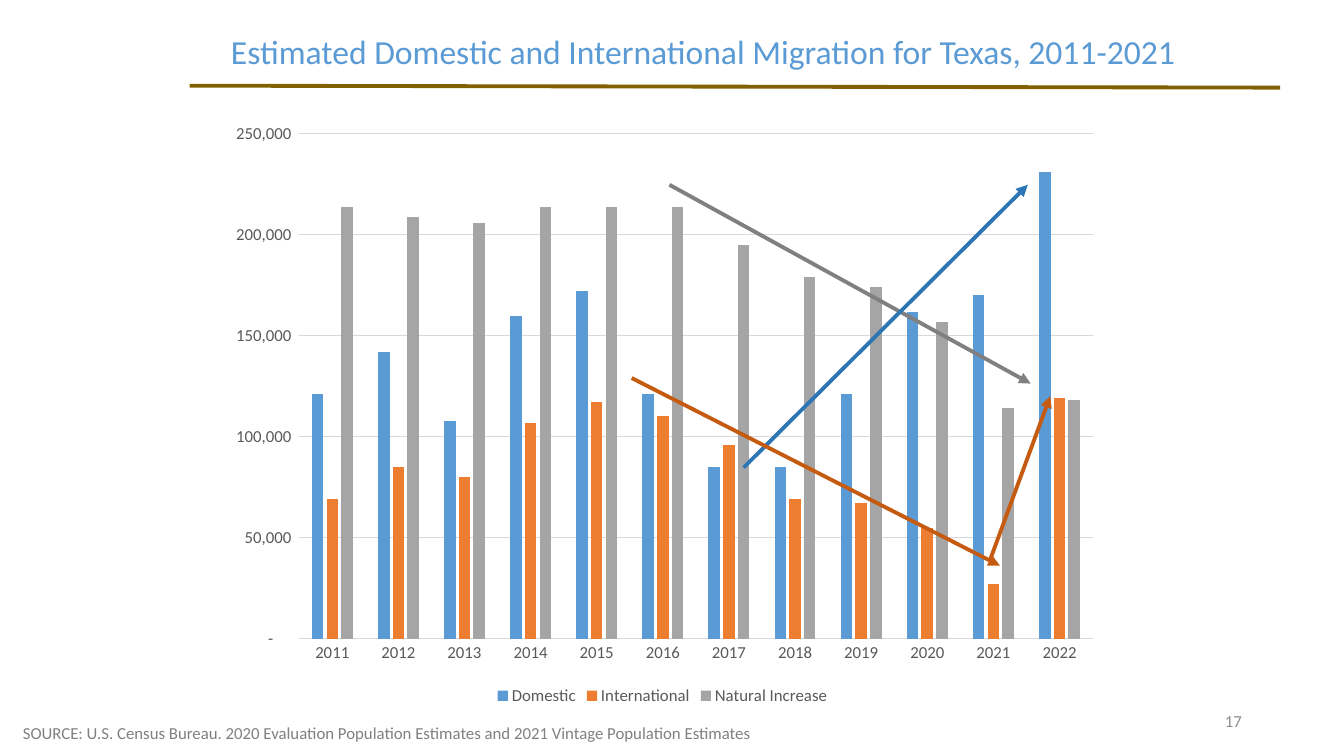
from lxml import etree
from pptx import Presentation
from pptx.chart.data import CategoryChartData
from pptx.dml.color import RGBColor
from pptx.enum.chart import XL_CHART_TYPE, XL_LEGEND_POSITION, XL_TICK_MARK
from pptx.enum.shapes import MSO_CONNECTOR
from pptx.enum.text import MSO_ANCHOR, PP_ALIGN
from pptx.oxml.ns import qn
from pptx.util import Pt

COLUMNS = XL_CHART_TYPE.COLUMN_CLUSTERED
LEGEND_BOTTOM = XL_LEGEND_POSITION.BOTTOM
NO_TICK = XL_TICK_MARK.NONE
STRAIGHT = MSO_CONNECTOR.STRAIGHT
TOP, MIDDLE = MSO_ANCHOR.TOP, MSO_ANCHOR.MIDDLE
LEFT, CENTER, RIGHT = PP_ALIGN.LEFT, PP_ALIGN.CENTER, PP_ALIGN.RIGHT

FONT = "Calibri"
BLUE, ORANGE, GRAY = "5B9BD5", "ED7D31", "A5A5A5"
DARK_BLUE, DARK_ORANGE, DARK_GRAY = "2E75B6", "C55A11", "808080"
GOLD, AXIS_TEXT, GRID, PAGE_NUMBER = "806000", "595959", "D9D9D9", "8C8C8C"

YEARS = [str(year) for year in range(2011, 2023)]
MIGRATION = [
    ("Domestic", BLUE, [121, 142, 108, 160, 172, 121, 85, 85, 121, 162, 170, 231]),
    ("International", ORANGE, [69, 85, 80, 107, 117, 110, 96, 69, 67, 55, 27, 119]),
    ("Natural Increase", GRAY, [214, 209, 206, 214, 214, 214, 195, 179, 174, 157, 114, 118]),
]
TRENDS = [
    (DARK_GRAY, (325, 52), (583, 194)),
    (DARK_BLUE, (378, 254), (581, 52)),
    (DARK_ORANGE, (298, 190), (561, 324)),
    (DARK_ORANGE, (554, 320), (597, 203)),
]


def color(value):
    return RGBColor.from_string(value)


def set_all(target, values):
    for name, value in values.items():
        setattr(target, name, value)


def style_font(font, size, value):
    set_all(font, {"name": FONT, "size": Pt(size), "bold": False})
    font.color.rgb = color(value)


def add_text(page, box, text, size, value, align=LEFT, anchor=TOP, spacing=1.0):
    frame = page.shapes.add_textbox(*map(Pt, box)).text_frame
    set_all(frame, {"word_wrap": True, "vertical_anchor": anchor})
    para = frame.paragraphs[0]
    set_all(para, {"alignment": align, "line_spacing": spacing})
    span = para.add_run()
    span.text = text
    style_font(span.font, size, value)


def add_line(page, start, end, value, arrow=False):
    line = page.shapes.add_connector(STRAIGHT, *map(Pt, (*start, *end)))
    line.line.width = Pt(2.75)
    line.line.color.rgb = color(value)
    if arrow:
        etree.SubElement(line.line._get_or_add_ln(), qn("a:tailEnd"), type="triangle")
    etree.SubElement(line._element.spPr, qn("a:effectLst"))


def add_header(page, box):
    left, top, width, height = box
    add_line(page, (left + 5.8, top + 39.6), (left + 784.8, top + 41), GOLD)
    add_text(page, box, "Estimated Domestic and International Migration for Texas, 2011-2021",
             24, BLUE, CENTER, spacing=0.9)


def style_axes(chart):
    for axis in (chart.category_axis, chart.value_axis):
        set_all(axis, {"major_tick_mark": NO_TICK, "minor_tick_mark": NO_TICK})
        style_font(axis.tick_labels.font, 12, AXIS_TEXT)
    values = chart.value_axis
    set_all(values, {"minimum_scale": 0, "maximum_scale": 250000, "major_unit": 50000})
    set_all(values.tick_labels, {
        "number_format": r'_(* #,##0_);_(* \(#,##0\);_(* "-"??_);_(@_)',
        "number_format_is_linked": False,
    })
    values.format.line.fill.background()
    for line in (chart.category_axis.format.line, values.major_gridlines.format.line):
        line.width = Pt(0.75)
        line.color.rgb = color(GRID)


def add_migration_chart(page, box):
    data = CategoryChartData()
    data.categories = YEARS
    for name, fill, thousands in MIGRATION:
        data.add_series(name, [value * 1000 for value in thousands])
    chart = page.shapes.add_chart(COLUMNS, *map(Pt, box), data).chart
    set_all(chart, {"has_title": False, "has_legend": True})
    style_font(chart.font, 10, "000000")
    set_all(chart.legend, {"position": LEGEND_BOTTOM, "include_in_layout": False})
    style_font(chart.legend.font, 12, AXIS_TEXT)
    style_axes(chart)
    plot = chart.plots[0]
    set_all(plot, {"gap_width": 219, "overlap": -27, "vary_by_categories": False})
    for series, (name, fill, thousands) in zip(plot.series, MIGRATION):
        series.format.fill.solid()
        series.format.fill.fore_color.rgb = color(fill)


def add_trends(page, box):
    left, top = box[:2]
    for value, start, end in TRENDS:
        add_line(page, (left + start[0], top + start[1]),
                 (left + end[0], top + end[1]), value, arrow=True)


def add_footer(page, box):
    left, top, width, height = box
    add_text(page, (left + 669, top, 216, 28.8), "17", 12, PAGE_NUMBER, RIGHT, MIDDLE)
    add_text(page, (left, top + 12.2, 630, 21.6),
             "SOURCE: U.S. Census Bureau. 2020 Evaluation Population Estimates "
             "and 2021 Vintage Population Estimates", 12, DARK_GRAY)


def main():
    deck = Presentation()
    set_all(deck, {"slide_width": Pt(960), "slide_height": Pt(540)})
    page = deck.slides.add_slide(deck.slide_layouts[6])
    chart_box = (153.2, 80, 640, 427)
    add_header(page, (129.6, 21.6, 745.2, 52.6))
    add_migration_chart(page, chart_box)
    add_trends(page, chart_box)
    add_footer(page, (9.2, 500.4, 885, 34))
    deck.save("out.pptx")


if __name__ == "__main__":
    main()
